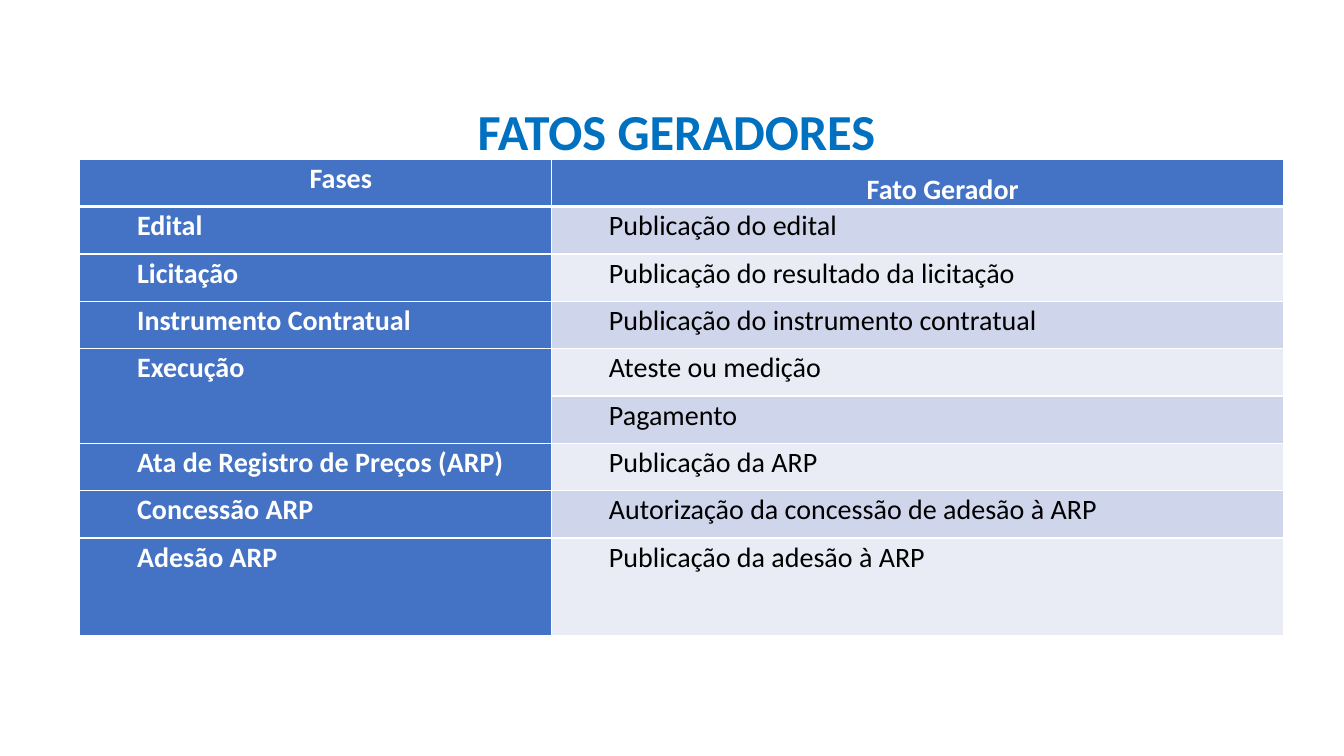
"""Build the slide that lists the triggering event of each procurement phase."""
from lxml import etree
from pptx import Presentation, util as u
from pptx.dml.color import RGBColor
from pptx.enum import text
from pptx.oxml.ns import qn

PX = 9144
WHITE, BLACK, TITLE_BLUE, BLUE = "FFFFFF", "000000", "0070C0", "4472C4"
BANDS = ("CFD5EA", "E9EBF5")
HEADER = ("Fases", "Fato Gerador")
PHASES = [
    ("Edital", ["Publicação do edital"]),
    ("Licitação", ["Publicação do resultado da licitação"]),
    ("Instrumento Contratual", ["Publicação do instrumento contratual"]),
    ("Execução", ["Ateste ou medição", "Pagamento"]),
    ("Ata de Registro de Preços (ARP)", ["Publicação da ARP"]),
    ("Concessão ARP", ["Autorização da concessão de adesão à ARP"]),
    ("Adesão ARP", ["Publicação da adesão à ARP"]),
]
COLUMNS = (468, 726)
ROW_H, LAST_ROW_H = 47, 97


def px(n):
    """Turn px into EMU."""
    return u.Emu(n * PX)


def rgb(value):
    """Return the colour of a hex string."""
    return RGBColor.from_string(value)


def set_all(obj, values):
    """Set each attribute of an object from a dict."""
    for name, value in values.items():
        setattr(obj, name, value)


def write(tf, content, size, color, bold, **para):
    """Write one formatted paragraph into a text frame."""
    p = tf.paragraphs[0]
    set_all(p, para)
    r = p.add_run()
    r.text = content
    set_all(r.font, {"name": "Calibri", "size": u.Pt(size), "bold": bold})
    r.font.color.rgb = rgb(color)
    return p


def add_title(s, content):
    """Place and format the title placeholder."""
    sp = s.shapes.title
    set_all(sp, {"left": px(100), "top": px(34), "width": px(1142), "height": px(242)})
    set_all(sp.text_frame, {"word_wrap": True, "vertical_anchor": text.MSO_ANCHOR.TOP,
                            "auto_size": text.MSO_AUTO_SIZE.SHAPE_TO_FIT_TEXT})
    write(sp.text_frame, content, 36, TITLE_BLUE, True,
          alignment=text.PP_ALIGN.CENTER, line_spacing=2.0)


def add_borders(cell, widths):
    """Draw white cell borders, given widths in points for left, right, top and bottom."""
    tcPr = cell._tc.get_or_add_tcPr()
    for i, (side, width) in enumerate(zip("LRTB", widths)):
        ln = etree.Element(qn(f"a:ln{side}"), w=str(u.Pt(width)))
        fill = etree.SubElement(ln, qn("a:solidFill"))
        etree.SubElement(fill, qn("a:srgbClr"), val=WHITE)
        tcPr.insert(i, ln)


def fill_cell(cell, content, fill, color, bold, **para):
    """Fill a table cell with indented text."""
    set_all(cell, {"margin_left": px(7), "margin_right": px(7),
                   "margin_top": 0, "margin_bottom": 0})
    cell.fill.solid()
    cell.fill.fore_color.rgb = rgb(fill)
    p = write(cell.text_frame, content, 20, color, bold, line_spacing=1.07, **para)
    p._p.get_or_add_pPr().set("marL", str(px(50)))


def add_phase_table(s):
    """Add the table of phases and events, one row for each event."""
    count = 1 + sum(len(events) for _, events in PHASES)
    height = ROW_H * (count - 1) + LAST_ROW_H
    table = s.shapes.add_table(count, 2, px(79), px(158), px(sum(COLUMNS)), px(height)).table
    for column, width in zip(table.columns, COLUMNS):
        column.width = px(width)
    for row in table.rows:
        row.height = px(ROW_H)
    table.rows[count - 1].height = px(LAST_ROW_H)

    for i, label in enumerate(HEADER):
        fill_cell(table.cell(0, i), label, BLUE, WHITE, True, alignment=text.PP_ALIGN.CENTER)
    table.cell(0, 1).vertical_anchor = text.MSO_ANCHOR.BOTTOM

    justify = text.PP_ALIGN.JUSTIFY
    row = 1
    for phase, events in PHASES:
        first = table.cell(row, 0)
        fill_cell(first, phase, BLUE, WHITE, True, alignment=justify)
        if len(events) > 1:
            first.merge(table.cell(row + len(events) - 1, 0))
        for event in events:
            fill_cell(table.cell(row, 1), event, BANDS[(row - 1) % 2], BLACK, False,
                      alignment=justify, space_after=u.Pt(8))
            row += 1

    for r in range(count):
        for c in range(2):
            add_borders(table.cell(r, c), (1, 1, 3 if r == 1 else 1, 3 if r == 0 else 1))


def main():
    """Build and save the presentation."""
    prs = Presentation()
    set_all(prs, {"slide_width": px(1333), "slide_height": px(750)})
    s = prs.slides.add_slide(prs.slide_layouts[5])
    add_title(s, "FATOS GERADORES")
    add_phase_table(s)
    prs.save("out.pptx")


if __name__ == "__main__":
    main()
